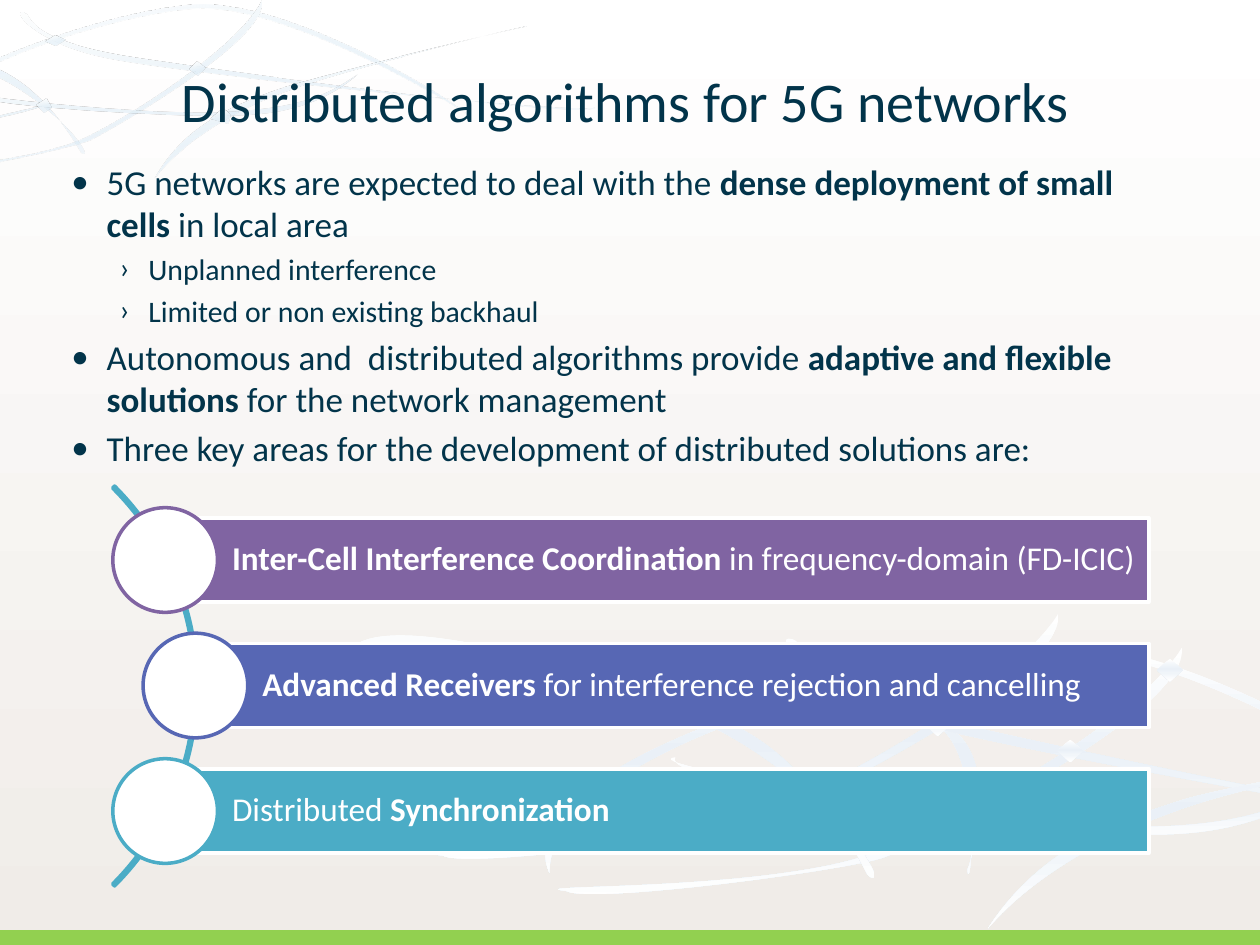
from lxml import etree
from pptx import Presentation
from pptx import util as u
from pptx.dml.color import RGBColor
from pptx.enum import shapes, text
from pptx.oxml import ns

COLORS = {"ink": "02344A", "white": "FFFFFF", "sand": "F0ECE8", "green": "92D050",
          "purple": "8064A2", "indigo": "5767B4", "teal": "4BACC6",
          "sky": "CAE2F3", "ice": "F4F9FC", "mist": "EAF0F7"}
FONT = "Calibri"

# Gradients: angle, then stops of (position %, colour, opacity %)
PAGE_GRADIENT = (90, [(0, "white", 100), (100, "sand", 100)])
TOP_GRADIENT = (260, [(0, "sky", 20), (68, "ice", 100), (100, "white", 100)])
BOTTOM_GRADIENT = (90, [(0, "white", 100), (45, "mist", 100), (100, "white", 100)])

# Ribbons: a start point, then three points per Bezier segment, in 1/100 inch
TOP_RIBBONS = [
    [-89, 130, -117, 77, 74, 10, 151, 4, 227, -3, 361, 80, 369, 90,
     393, 103, 230, 0, 153, 7, 77, 13, -94, 70, -89, 130],
    [207, 1, 213, 32, 86, 104, 72, 111, 58, 118, -69, 144, -81, 138,
     -108, 137, 20, 132, 68, 109, 115, 86, 191, 34, 207, 1],
    [472, 85, 465, 95, 174, 56, 99, 44, 24, 31, 26, 15, 21, 11,
     7, 3, 22, 36, 97, 48, 172, 61, 453, 90, 472, 85],
    [-190, 27, -167, 8, -50, 37, -8, 52, 35, 68, 59, 113, 64, 121,
     77, 129, 47, 83, -10, 57, -67, 31, -167, 20, -190, 27],
    [38, 83, -139, 125, -173, 116, -190, 117, -208, 119, -389, 122, -401, 116,
     -429, 115, -213, 116, -140, 110, -67, 105, 0, 97, 38, 83],
    [123, 142, 147, 98, 189, 83, 212, 74, 235, 64, 412, 21, 417, 21,
     428, 17, 267, 56, 218, 76, 169, 96, 138, 122, 123, 142],
    [284, 59, 246, 92, 202, 91, 178, 92, 153, 93, -41, 85, -33, 70,
     -56, 74, 112, 92, 177, 89, 243, 86, 263, 73, 284, 59],
]
BOTTOM_RIBBONS = [
    [526, 538, 564, 502, 712, 550, 752, 576, 793, 601, 774, 674, 768, 690,
     769, 717, 783, 600, 743, 575, 702, 550, 568, 521, 526, 538],
    [840, 487, 846, 539, 630, 642, 605, 652, 581, 662, 370, 690, 351, 679,
     306, 675, 517, 680, 598, 648, 680, 616, 809, 539, 840, 487],
    [436, 693, 397, 602, 719, 515, 845, 513, 971, 511, 1181, 662, 1193, 680,
     1232, 704, 975, 516, 849, 518, 723, 520, 435, 594, 436, 693],
    [938, 514, 944, 567, 728, 670, 703, 680, 679, 690, 468, 718, 449, 707,
     404, 702, 615, 708, 696, 676, 778, 643, 907, 567, 938, 514],
    [1364, 684, 1352, 700, 877, 602, 755, 573, 633, 544, 638, 517, 632, 509,
     609, 495, 629, 551, 751, 580, 873, 609, 1332, 690, 1364, 684],
    [282, 512, 323, 483, 511, 544, 579, 574, 647, 605, 681, 681, 689, 695,
     710, 710, 666, 632, 575, 582, 484, 532, 321, 503, 282, 512],
    [784, 737, 829, 667, 899, 648, 938, 635, 977, 622, 1272, 570, 1280, 572,
     1299, 567, 1030, 611, 947, 639, 864, 666, 811, 705, 784, 737],
    [1058, 618, 992, 669, 920, 663, 879, 661, 838, 660, 521, 624, 536, 601,
     497, 605, 771, 653, 879, 656, 987, 659, 1022, 639, 1058, 618],
]
TOP_KNOTS = [[29, 83, 37, 78, 41, 85, 35, 89], [167, 94, 177, 86, 183, 91, 181, 98]]
TOP_DIAMONDS = [(3.81, 1.24, 0.33, 0.28), (0.91, 0.71, 0.41, 0.2)]
BOTTOM_DIAMONDS = [(21.31, 14.91, 0.53, 0.46), (18.64, 14.38, 0.53, 0.46),
                   (23.32, 13.28, 0.53, 0.46)]

# Body: level, runs of (text, bold)
BODY = [
    (0, [("5G networks are expected to deal with the ", False),
         ("dense deployment of small cells", True), (" in local area", False)]),
    (1, [("Unplanned interference", False)]),
    (1, [("Limited or non existing backhaul", False)]),
    (0, [("Autonomous and  distributed algorithms provide ", False),
         ("adaptive and flexible solutions ", True),
         ("for the network management", False)]),
    (0, [("Three key areas for the development of distributed solutions are:", False)]),
]
# Level: bullet, size, left margin, hanging indent
LEVELS = [("•", 20, 0.71, 0.71), ("›", 17, 1.55, 0.58)]

# Key areas: left edge, colour, runs
AREAS = [
    (3.33, "purple", [("Inter-Cell Interference Coordination ", True),
                      ("in frequency-domain (FD-ICIC)", False)]),
    (3.94, "indigo", [("Advanced Receivers ", True),
                      ("for interference rejection and cancelling", False)]),
    (3.33, "teal", [("Distributed ", False), ("Synchronization", True)]),
]


def rgb(name):
    return RGBColor.from_string(COLORS[name])


def set_gradient(fill, element, gradient):
    """Fill with a gradient; element is the XML that holds the fill."""
    angle, stops = gradient
    fill.gradient()
    grad = next(element.iter(ns.qn("a:gradFill")))
    stop_list = grad.find(ns.qn("a:gsLst"))
    for old in list(stop_list):
        stop_list.remove(old)
    for position, color, opacity in stops:
        stop = etree.SubElement(stop_list, ns.qn("a:gs"), pos=str(position * 1000))
        value = etree.SubElement(stop, ns.qn("a:srgbClr"), val=COLORS[color])
        if opacity < 100:
            etree.SubElement(value, ns.qn("a:alpha"), val=str(opacity * 1000))
    grad.find(ns.qn("a:lin")).set("ang", str(angle * 60000))


def add_shape(page, kind, box, fill=None, line=None):
    shape = page.shapes.add_shape(kind, *map(u.Cm, box))
    shape.shadow.inherit = False
    if fill:
        shape.fill.solid()
        shape.fill.fore_color.rgb = rgb(fill)
    else:
        shape.fill.background()
    if line:
        shape.line.color.rgb = rgb(line)
        shape.line.width = u.Pt(2)
    else:
        shape.line.fill.background()
    return shape


def add_outline(page, numbers, gradient):
    start, *rest = [(u.Cm(x * 0.0254), u.Cm(y * 0.0254))
                    for x, y in zip(numbers[::2], numbers[1::2])]
    builder = page.shapes.build_freeform(*start)
    builder.add_line_segments(rest, close=True)
    shape = builder.convert_to_shape()
    shape.shadow.inherit = False
    shape.line.fill.background()
    set_gradient(shape.fill, shape._element, gradient)
    return shape


def bend(shape):
    """Turn every three straight segments into one Bezier segment."""
    lines = list(shape._element.iter(ns.qn("a:lnTo")))
    for first in range(0, len(lines), 3):
        curve = etree.Element(ns.qn("a:cubicBezTo"))
        lines[first].addprevious(curve)
        for line in lines[first:first + 3]:
            curve.append(line[0])
            line.getparent().remove(line)


def add_swirl(page, ribbons, knots, diamonds, gradient, rotation=0):
    for ribbon in ribbons:
        bend(add_outline(page, ribbon, gradient))
    for knot in knots:
        add_outline(page, knot, gradient)
    for box in diamonds:
        diamond = add_shape(page, shapes.MSO_SHAPE.DIAMOND, box)
        diamond.rotation = rotation
        set_gradient(diamond.fill, diamond._element, gradient)


def add_runs(para, runs, size, color):
    for words, bold in runs:
        span = para.add_run()
        span.text = words
        span.font.name, span.font.size, span.font.bold = FONT, u.Pt(size), bold
        span.font.color.rgb = rgb(color)


def add_text_frame(page, box):
    frame = page.shapes.add_textbox(*map(u.Cm, box)).text_frame
    frame.word_wrap = True
    return frame


def add_title(page):
    frame = add_text_frame(page, (1.12, 1.12, 22.99, 1.78))
    frame.vertical_anchor = text.MSO_ANCHOR.MIDDLE
    para = frame.paragraphs[0]
    para.alignment = text.PP_ALIGN.CENTER
    add_runs(para, [("Distributed algorithms for 5G networks", False)], 32, "ink")


def add_body(page):
    frame = add_text_frame(page, (1.19, 3.12, 22.71, 15.39))
    for index, (level, runs) in enumerate(BODY):
        para = frame.add_paragraph() if index else frame.paragraphs[0]
        bullet, size, margin, hang = LEVELS[level]
        para.level = level
        para.space_before = u.Pt(size * 0.2)
        props = para._p.get_or_add_pPr()
        props.set("marL", str(u.Cm(margin)))
        props.set("indent", str(-u.Cm(hang)))
        etree.SubElement(props, ns.qn("a:buFont"), typeface=FONT)
        etree.SubElement(props, ns.qn("a:buChar"), char=bullet)
        add_runs(para, runs, size, "ink")


def add_area(page, left, top, color, runs):
    """A bar with a disc centred on its left edge."""
    right, height, disc = 23.16, 1.7, 2.11
    bar = add_shape(page, shapes.MSO_SHAPE.RECTANGLE,
                    (left, top, right - left, height), color, "white")
    frame = bar.text_frame
    frame.word_wrap = True
    frame.vertical_anchor = text.MSO_ANCHOR.MIDDLE
    frame.margin_left = u.Cm(1.35)
    frame.margin_right = frame.margin_top = frame.margin_bottom = u.Cm(0.13)
    para = frame.paragraphs[0]
    para.alignment = text.PP_ALIGN.LEFT
    para.line_spacing = 0.9
    add_runs(para, runs, 19, "white")
    add_shape(page, shapes.MSO_SHAPE.OVAL,
              (left - disc / 2, top + (height - disc) / 2, disc, disc), "white", color)


def add_key_areas(page):
    arc = add_shape(page, shapes.MSO_SHAPE.BLOCK_ARC, (-7.42, 8.13, 11.4, 11.4), line="teal")
    for index, value in enumerate((189, 27, 0.005)):
        arc.adjustments[index] = value
    for index, (left, color, runs) in enumerate(AREAS):
        add_area(page, left, 10.44 + 2.53 * index, color, runs)


def main():
    deck = Presentation()
    deck.slide_width, deck.slide_height = u.Cm(25.4), u.Cm(19.05)
    page = deck.slides.add_slide(deck.slide_layouts[6])
    set_gradient(page.background.fill, page._element, PAGE_GRADIENT)
    add_swirl(page, TOP_RIBBONS, TOP_KNOTS, TOP_DIAMONDS, TOP_GRADIENT, 356)
    add_swirl(page, BOTTOM_RIBBONS, [], BOTTOM_DIAMONDS, BOTTOM_GRADIENT)
    add_shape(page, shapes.MSO_SHAPE.RECTANGLE, (0, 18.75, 25.4, 0.3), "green")
    add_title(page)
    add_body(page)
    add_key_areas(page)
    deck.save("out.pptx")


if __name__ == "__main__":
    main()
